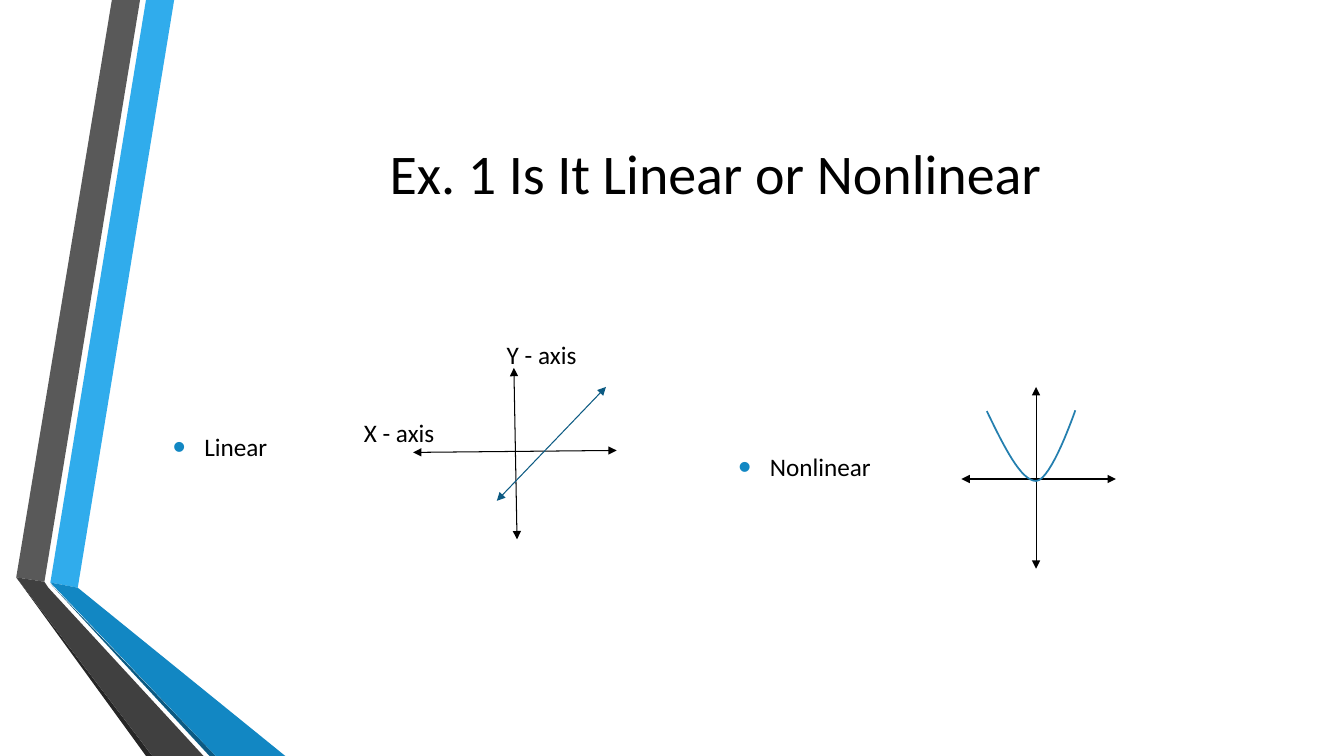
from dataclasses import dataclass

import pptx
import pptx.dml.color
import pptx.enum.shapes
import pptx.enum.text
import pptx.oxml
import pptx.oxml.ns
import pptx.shapes.autoshape
import pptx.slide
import pptx.text.text
import pptx.util

Cm = pptx.util.Cm
Pt = pptx.util.Pt
RGBColor = pptx.dml.color.RGBColor
Point = tuple[float, float]

BLACK = RGBColor(0x00, 0x00, 0x00)
LIGHT_BLUE = RGBColor(0x30, 0xAC, 0xEC)
BLUE = RGBColor(0x12, 0x87, 0xC3)
DARK_BLUE = RGBColor(0x0C, 0x5A, 0x82)
CURVE_BLUE = RGBColor(0x24, 0x7F, 0xAF)
GRAY = RGBColor(0x59, 0x59, 0x59)
DARK_GRAY = RGBColor(0x40, 0x40, 0x40)
EDGE_GRAY = RGBColor(0x26, 0x26, 0x26)

FONT = "Calibri"
SLIDE_WIDTH, SLIDE_HEIGHT = 33.87, 19.05
CURVE_STEPS = 16


@dataclass(frozen=True)
class Ribbon:
    color: RGBColor
    corners: list[Point]


@dataclass(frozen=True)
class Arrow:
    start: Point
    end: Point
    color: RGBColor = BLACK


@dataclass(frozen=True)
class Label:
    text: str
    left: float
    top: float
    width: float
    height: float
    size: int = 18
    centered: bool = False
    middle: bool = False
    bulleted: bool = False
    wrap: bool = True
    bottom_inset: float = 0.13


RIBBONS = [
    Ribbon(LIGHT_BLUE, [(1.27, 14.68), (1.96, 14.81), (4.39, 0), (3.68, 0)]),
    Ribbon(GRAY, [(3.53, 0), (2.82, 0), (0.41, 14.55), (1.12, 14.66)]),
    Ribbon(EDGE_GRAY, [(0.41, 14.55), (3.68, SLIDE_HEIGHT), (3.84, SLIDE_HEIGHT)]),
    Ribbon(DARK_BLUE, [(1.27, 14.71), (5.28, SLIDE_HEIGHT), (5.44, SLIDE_HEIGHT)]),
    Ribbon(BLUE, [(1.27, 14.68), (5.44, SLIDE_HEIGHT), (7.19, SLIDE_HEIGHT),
                  (1.96, 14.81)]),
    Ribbon(DARK_GRAY, [(5.13, SLIDE_HEIGHT), (1.22, 14.81), (1.12, 14.66),
                       (0.41, 14.55), (3.84, SLIDE_HEIGHT)]),
]

LABELS = [
    Label("Ex. 1 Is It Linear or Nonlinear", 4.11, 1.91, 27.84, 4.88,
          size=40, centered=True, middle=True),
    Label("Linear", 4.11, 7.42, 13.59, 8.69, middle=True, bulleted=True,
          bottom_inset=1.15),
    Label("Nonlinear", 18.36, 7.42, 13.59, 8.69, middle=True, bulleted=True),
    Label("X - axis", 8.92, 10.39, 2.36, 1.02, wrap=False),
    Label("Y - axis", 12.52, 8.43, 2.39, 1.02, wrap=False),
]

ARROWS = [
    Arrow((10.41, 11.4), (15.54, 11.35)),
    Arrow((12.95, 9.27), (13.03, 13.59)),
    Arrow((12.52, 12.62), (15.27, 9.75), DARK_BLUE),
    Arrow((26.11, 9.75), (26.11, 14.33)),
    Arrow((24.23, 12.07), (28.12, 12.07)),
]

PARABOLA_LEFT = [(24.87, 10.36), (25.3, 11.25), (25.73, 12.12), (26.11, 12.12)]
PARABOLA_RIGHT = [(26.11, 12.12), (26.49, 12.12), (27.1, 10.34), (27.1, 10.34)]


def add_xml(parent: pptx.oxml.xmlchemy.BaseOxmlElement, tag: str,
            **attributes: str) -> pptx.oxml.xmlchemy.BaseOxmlElement:
    child = pptx.oxml.parse_xml(f"<{tag} {pptx.oxml.ns.nsdecls('a')}/>")
    for name, value in attributes.items():
        child.set(name, value)
    parent.append(child)
    return child


def add_outline(slide: pptx.slide.Slide, points: list[Point],
                close: bool) -> pptx.shapes.autoshape.Shape:
    start, *rest = [(Cm(x), Cm(y)) for x, y in points]
    builder = slide.shapes.build_freeform(*start)
    builder.add_line_segments(rest, close=close)
    outline = builder.convert_to_shape()
    outline.shadow.inherit = False
    return outline


def draw_ribbon(slide: pptx.slide.Slide, ribbon: Ribbon) -> None:
    shape = add_outline(slide, ribbon.corners, close=True)
    shape.fill.solid()
    shape.fill.fore_color.rgb = ribbon.color
    shape.line.fill.background()


def add_bullet(paragraph: pptx.text.text._Paragraph) -> None:
    paragraph.space_before = Pt(3.6)
    paragraph.space_after = Pt(6)
    properties = paragraph._p.get_or_add_pPr()
    properties.set("marL", str(Cm(0.79)))
    properties.set("indent", str(Cm(-0.79)))
    add_xml(add_xml(properties, "a:buClr"), "a:srgbClr", val=str(BLUE))
    add_xml(properties, "a:buSzPct", val="145000")
    add_xml(properties, "a:buFont", typeface="Arial")
    add_xml(properties, "a:buChar", char="•")


def draw_label(slide: pptx.slide.Slide, label: Label) -> None:
    box = slide.shapes.add_textbox(
        Cm(label.left), Cm(label.top), Cm(label.width), Cm(label.height))
    frame = box.text_frame
    frame.word_wrap = label.wrap
    frame.margin_bottom = Cm(label.bottom_inset)
    if label.middle:
        frame.vertical_anchor = pptx.enum.text.MSO_ANCHOR.MIDDLE
    paragraph = frame.paragraphs[0]
    if label.centered:
        paragraph.alignment = pptx.enum.text.PP_ALIGN.CENTER
    if label.bulleted:
        add_bullet(paragraph)
    run = paragraph.add_run()
    run.text = label.text
    run.font.name = FONT
    run.font.size = Pt(label.size)
    run.font.color.rgb = BLACK


def draw_arrow(slide: pptx.slide.Slide, arrow: Arrow) -> None:
    """Draw a straight line with a triangle at both ends."""
    (x1, y1), (x2, y2) = arrow.start, arrow.end
    connector = slide.shapes.add_connector(
        pptx.enum.shapes.MSO_CONNECTOR.STRAIGHT, Cm(x1), Cm(y1), Cm(x2), Cm(y2))
    connector.line.width = Pt(0.75)
    connector.line.color.rgb = arrow.color
    properties = connector._element.spPr
    line = properties.find(pptx.oxml.ns.qn("a:ln"))
    for end in ("a:headEnd", "a:tailEnd"):
        add_xml(line, end, type="triangle")
    add_xml(properties, "a:effectLst")


def bezier_point(controls: list[Point], t: float) -> Point:
    weights = [(1 - t) ** 3, 3 * t * (1 - t) ** 2, 3 * t ** 2 * (1 - t), t ** 3]
    return (sum(w * x for w, (x, _) in zip(weights, controls)),
            sum(w * y for w, (_, y) in zip(weights, controls)))


def draw_parabola(slide: pptx.slide.Slide) -> None:
    points = [PARABOLA_LEFT[0]]
    for half in (PARABOLA_LEFT, PARABOLA_RIGHT):
        points += [bezier_point(half, step / CURVE_STEPS)
                   for step in range(1, CURVE_STEPS + 1)]
    curve = add_outline(slide, points, close=False)
    curve.fill.background()
    curve.line.color.rgb = CURVE_BLUE
    curve.line.width = Pt(1.25)


def main() -> None:
    presentation = pptx.Presentation()
    presentation.slide_width = Cm(SLIDE_WIDTH)
    presentation.slide_height = Cm(SLIDE_HEIGHT)
    slide = presentation.slides.add_slide(presentation.slide_layouts[6])
    for ribbon in RIBBONS:
        draw_ribbon(slide, ribbon)
    for label in LABELS:
        draw_label(slide, label)
    for arrow in ARROWS:
        draw_arrow(slide, arrow)
    draw_parabola(slide)
    presentation.save("out.pptx")


if __name__ == "__main__":
    main()
